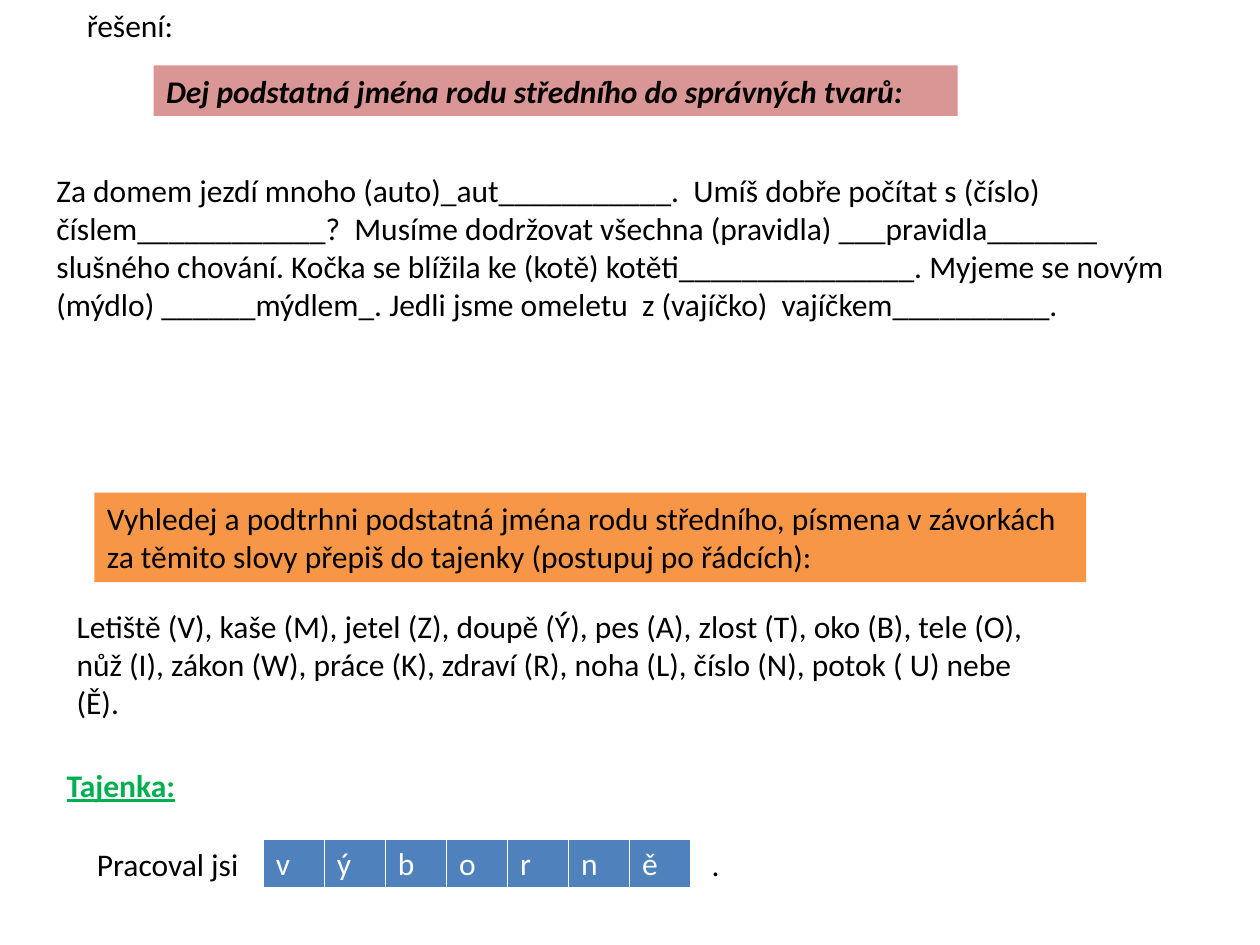
from dataclasses import dataclass
from lxml.etree import SubElement
from pptx import Presentation
from pptx.dml.color import RGBColor as RGB
from pptx.enum.shapes import MSO_SHAPE as Preset
from pptx.enum.text import MSO_ANCHOR as Anchor, MSO_AUTO_SIZE as AutoSize, PP_ALIGN as Align
from pptx.oxml.ns import qn
from pptx.util import Inches, Pt


@dataclass(frozen=True)
class Theme:
    font: str = "Calibri"
    size: int = 18
    ink: str = "000000"
    light: str = "FFFFFF"
    rose: str = "D99694"
    orange: str = "F79646"
    blue: str = "4F81BD"
    green: str = "00B050"


theme = Theme()
deck = Presentation()
deck.slide_width, deck.slide_height = Inches(10), Inches(7.5)
slide = deck.slides.add_slide(deck.slide_layouts[6])
column = deck.slide_width / 100
row = deck.slide_height / 75


def place(left, top, width, height):
    return [round(n * unit) for n, unit in zip((left, top, width, height), (column, row) * 2)]


def write(frame, words, color=theme.ink, bold=False, italic=False, underline=False):
    paragraph = frame.paragraphs[0]
    paragraph.alignment = Align.LEFT
    run = paragraph.add_run()
    run.text = words
    font = run.font
    font.name, font.size = theme.font, Pt(theme.size)
    font.bold, font.italic, font.underline = bold, italic, underline
    font.color.rgb = RGB.from_string(color)


headings = [
    ((12.2, 5.2, 63.8, 4), theme.rose, {"bold": True, "italic": True},
     "Dej podstatná jména rodu středního do správných tvarů:"),
    ((7.5, 39.1, 78.7, 7.1), theme.orange, {},
     "Vyhledej a podtrhni podstatná jména rodu středního, písmena v závorkách "
     "za těmito slovy přepiš do tajenky (postupuj po řádcích):"),
]
for spot, color, style, words in headings:
    heading = slide.shapes.add_shape(Preset.RECTANGLE, *place(*spot))
    heading.shadow.inherit = False
    heading.fill.solid()
    heading.fill.fore_color.rgb = RGB.from_string(color)
    heading.line.fill.background()
    heading.text_frame.word_wrap = True
    heading.text_frame.auto_size = AutoSize.SHAPE_TO_FIT_TEXT
    heading.text_frame.vertical_anchor = Anchor.TOP
    write(heading.text_frame, words, **style)

passages = [
    ((5.9, 0, 22.8, 4), {}, "řešení:"),
    ((3.5, 13.1, 90.6, 13.1), {},
     "Za domem jezdí mnoho (auto)_aut___________.  Umíš dobře počítat s (číslo) "
     "číslem____________?  Musíme dodržovat všechna (pravidla) ___pravidla_______ "
     "slušného chování. Kočka se blížila ke (kotě) kotěti_______________. "
     "Myjeme se novým (mýdlo) ______mýdlem_. "
     "Jedli jsme omeletu  z (vajíčko)  vajíčkem__________."),
    ((5.1, 47.7, 78.7, 10.1), {},
     "Letiště (V), kaše (M), jetel (Z), doupě (Ý), pes (A), zlost (T), oko (B), "
     "tele (O), nůž (I), zákon (W), práce (K), zdraví (R), noha (L), číslo (N), "
     "potok ( U) nebe (Ě)."),
    ((4.3, 60.3, 14.2, 4), {"color": theme.green, "bold": True, "underline": True}, "Tajenka:"),
    ((6.7, 66.6, 14.2, 4), {}, "Pracoval jsi"),
    ((55.5, 66.6, 4.7, 4), {}, "."),
]
for spot, style, words in passages:
    passage = slide.shapes.add_textbox(*place(*spot)).text_frame
    passage.word_wrap = True
    passage.auto_size = AutoSize.SHAPE_TO_FIT_TEXT
    write(passage, words, **style)

answer = "výborně"
puzzle = slide.shapes.add_table(1, len(answer), *place(20.9, 66.6, 33.9, 4)).table
puzzle.first_row = puzzle.horz_banding = False
for cell, letter in zip(puzzle.iter_cells(), answer):
    write(cell.text_frame, letter, theme.light)
    borders = cell._tc.get_or_add_tcPr()
    for side, width in (("L", 1), ("R", 1), ("T", 1), ("B", 3)):
        border = SubElement(borders, qn(f"a:ln{side}"), w=str(Pt(width)))
        paint = SubElement(border, qn("a:solidFill"))
        SubElement(paint, qn("a:srgbClr"), val=theme.light)
    cell.fill.solid()
    cell.fill.fore_color.rgb = RGB.from_string(theme.blue)

deck.save("out.pptx")
